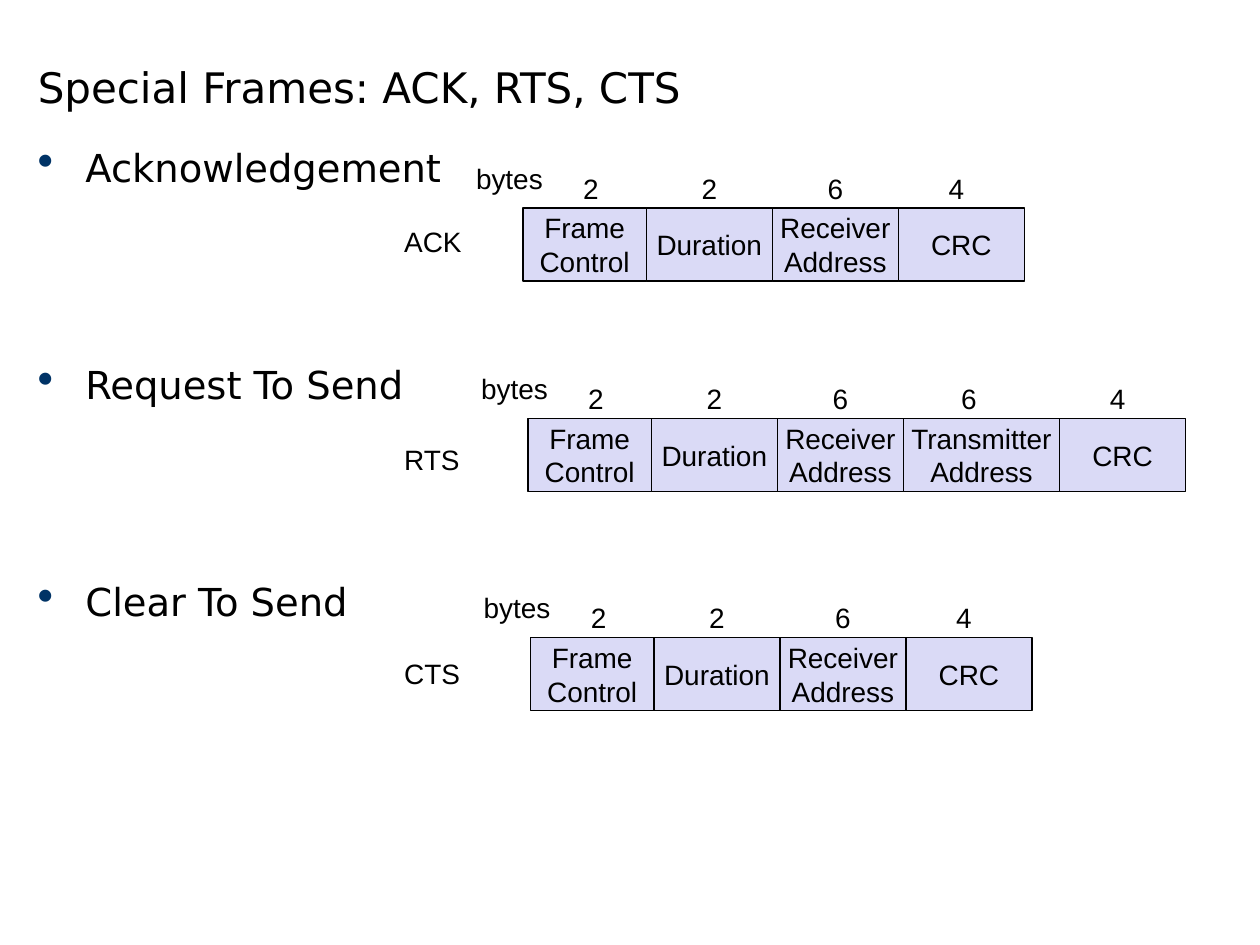
import lxml.etree
import pptx
import pptx.dml.color
import pptx.enum.shapes
import pptx.enum.text
import pptx.oxml.ns
import pptx.util

Inches = pptx.util.Inches
Pt = pptx.util.Pt
RGBColor = pptx.dml.color.RGBColor
PP_ALIGN = pptx.enum.text.PP_ALIGN
MSO_ANCHOR = pptx.enum.text.MSO_ANCHOR

BLACK = RGBColor(0x00, 0x00, 0x00)
LAVENDER = RGBColor(0xDA, 0xDA, 0xF6)
NAVY = RGBColor(0x00, 0x33, 0x66)

FRAME_CONTROL = ("Frame\nControl", 0.98, "2", 0.38)
DURATION = ("Duration", 1, "2", 0.34)
RECEIVER = ("Receiver\nAddress", 1, "6", 0.34)
TRANSMITTER = ("Transmitter\nAddress", 1.24, "6", 0.36)
CRC = ("CRC", 1, "4", 0.3)
SHORT_FRAME = (FRAME_CONTROL, DURATION, RECEIVER, CRC)
LONG_FRAME = (FRAME_CONTROL, DURATION, RECEIVER, TRANSMITTER, CRC)

FRAMES = (
    ("ACK", 0.66, 1.73, 4.15, 1.65, SHORT_FRAME),
    ("RTS", 0.64, 3.46, 4.19, 3.32, LONG_FRAME),
    ("CTS", 0.64, 5.16, 4.21, 5.06, SHORT_FRAME),
)


class FrameSlide:
    heading_font = "DejaVu Sans"
    diagram_font = "Arial"
    diagram_size = 16
    field_height = 0.58

    def __init__(self, slide):
        self.slide = slide

    def format_text(self, text_frame, font, size, align=PP_ALIGN.LEFT):
        for paragraph in text_frame.paragraphs:
            paragraph.alignment = align
            for run in paragraph.runs:
                run.font.name = font
                run.font.size = Pt(size)
                run.font.color.rgb = BLACK

    def title(self, text, left, top, width, height):
        heading = self.slide.shapes.title
        heading.left, heading.top = Inches(left), Inches(top)
        heading.width, heading.height = Inches(width), Inches(height)
        frame = heading.text_frame
        frame.text = text
        frame.vertical_anchor = MSO_ANCHOR.BOTTOM
        frame.margin_bottom = Inches(0.02)
        self.format_text(frame, self.heading_font, 24)

    def bullets(self, items, left, top, width, height, gap):
        frame = self.slide.shapes.add_textbox(
            Inches(left), Inches(top), Inches(width), Inches(height)).text_frame
        frame.word_wrap = True
        frame.margin_top = Inches(0.07)
        frame.text = "\n".join(items)
        for index, paragraph in enumerate(frame.paragraphs):
            self.add_bullet(paragraph)
            if index:
                paragraph.space_before = Pt(gap)
        self.format_text(frame, self.heading_font, 22)

    def add_bullet(self, paragraph):
        qn = pptx.oxml.ns.qn
        properties = paragraph._p.get_or_add_pPr()
        properties.set("marL", str(Inches(0.38)))
        properties.set("indent", str(-Inches(0.38)))
        colour = lxml.etree.SubElement(properties, qn("a:buClr"))
        lxml.etree.SubElement(colour, qn("a:srgbClr"), val=str(NAVY))
        lxml.etree.SubElement(properties, qn("a:buSzPct"), val="120000")
        lxml.etree.SubElement(properties, qn("a:buChar"), char="•")

    def label(self, text, left, top, width):
        frame = self.slide.shapes.add_textbox(
            Inches(left), Inches(top), Inches(width), Inches(0.37)).text_frame
        frame.word_wrap = False
        frame.auto_size = pptx.enum.text.MSO_AUTO_SIZE.SHAPE_TO_FIT_TEXT
        frame.text = text
        self.format_text(frame, self.diagram_font, self.diagram_size)

    def field(self, text, left, top, width):
        box = self.slide.shapes.add_shape(
            pptx.enum.shapes.MSO_SHAPE.RECTANGLE,
            Inches(left), Inches(top), Inches(width), Inches(self.field_height))
        box.shadow.inherit = False
        box.fill.solid()
        box.fill.fore_color.rgb = LAVENDER
        box.line.color.rgb = BLACK
        box.line.width = Pt(0.75)
        frame = box.text_frame
        frame.word_wrap = False
        frame.vertical_anchor = MSO_ANCHOR.MIDDLE
        frame.text = text
        self.format_text(frame, self.diagram_font, self.diagram_size, PP_ALIGN.CENTER)

    def frame_format(self, left, top, fields):
        self.label("bytes", left - 0.47, top - 0.42, 0.73)
        for name, width, byte_count, count_offset in fields:
            self.field(name, left, top, width)
            self.label(byte_count, left + count_offset, top - 0.34, 0.32)
            left += width


def main():
    presentation = pptx.Presentation()
    presentation.slide_width = Inches(10)
    presentation.slide_height = Inches(7.5)
    page = FrameSlide(presentation.slides.add_slide(presentation.slide_layouts[5]))
    page.title("Special Frames: ACK, RTS, CTS", 0.2, 0, 6.61, 0.91)
    page.bullets(("Acknowledgement", "Request To Send", "Clear To Send"),
                 0.2, 1.07, 9.61, 5.85, gap=97.8)
    for name, name_width, name_top, left, top, fields in FRAMES:
        page.frame_format(left, top, fields)
        page.label(name, 3.11, name_top, name_width)
    presentation.save("out.pptx")


if __name__ == "__main__":
    main()
